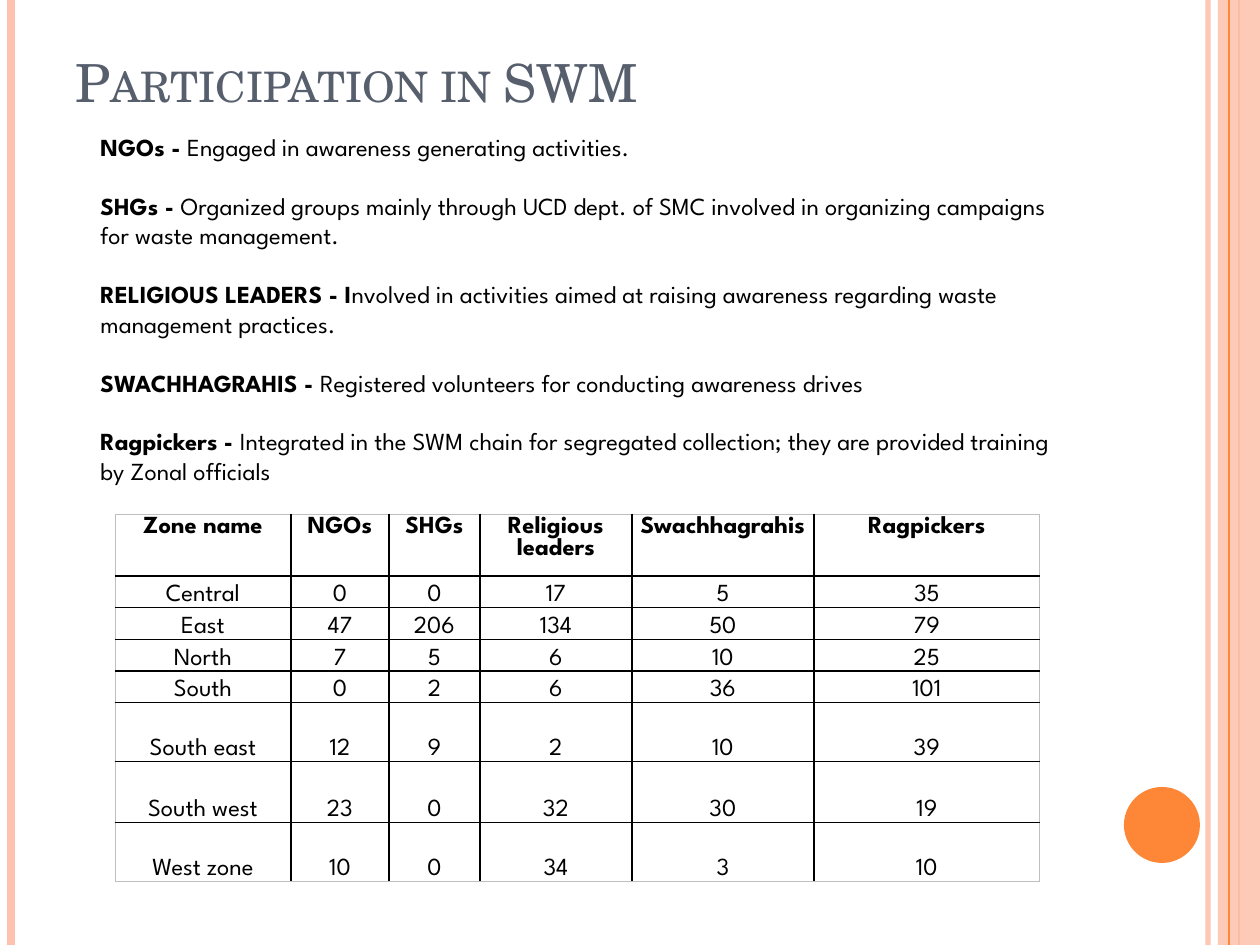
from dataclasses import dataclass

from lxml.etree import SubElement
from pptx import Presentation
from pptx.dml.color import RGBColor
from pptx.enum.shapes import MSO_CONNECTOR, MSO_SHAPE
from pptx.enum.text import MSO_ANCHOR as Anchor, PP_ALIGN as Align
from pptx.oxml import parse_xml
from pptx.oxml.ns import nsdecls, qn
from pptx.util import Emu, Pt

PX = 914400 / 126
WIDTH, HEIGHT = 1260, 945
PEACH = RGBColor(0xFE, 0xC3, 0xAE)
ORANGE = RGBColor(0xFE, 0x86, 0x37)
SLATE = RGBColor(0x57, 0x5F, 0x6D)
BLACK = RGBColor(0, 0, 0)
WHITE = RGBColor(0xFF, 0xFF, 0xFF)
GREY = RGBColor(0xBF, 0xBF, 0xBF)
BODY_FONT, TITLE_FONT = "League Spartan", "TeX Gyre Schola"


@dataclass(frozen=True)
class Stripe:
    x: int
    color: RGBColor
    points: float
    opacity: int = 100


@dataclass(frozen=True)
class Group:
    label: str
    role: str


STRIPES = [
    Stripe(1208, PEACH, 3, 93),
    Stripe(11, PEACH, 4.5),
    Stripe(1239, ORANGE, 1.5),
]
FRONT_STRIPE = Stripe(1229, ORANGE, 0.75)
GROUPS = [
    Group("NGOs - ", "Engaged in awareness generating activities."),
    Group("SHGs - ", "Organized groups mainly through UCD dept. of SMC involved in "
                     "organizing campaigns for waste management."),
    Group("RELIGIOUS LEADERS - I", "nvolved in activities aimed at raising awareness "
                                   "regarding waste management practices."),
    Group("SWACHHAGRAHIS - ", "Registered volunteers for conducting awareness drives"),
    Group("Ragpickers - ", "Integrated in the SWM chain for segregated collection; "
                           "they are provided training by Zonal officials"),
]
ZONES = [
    ("Zone name", "NGOs", "SHGs", "Religious leaders", "Swachhagrahis", "Ragpickers"),
    ("Central", 0, 0, 17, 5, 35),
    ("East", 47, 206, 134, 50, 79),
    ("North", 7, 5, 6, 10, 25),
    ("South", 0, 2, 6, 36, 101),
    ("South east", 12, 9, 2, 10, 39),
    ("South west", 23, 0, 32, 30, 19),
    ("West zone", 10, 0, 34, 3, 10),
]
COLUMN_WIDTHS = [176, 98, 91, 152, 182, 226]
ROW_HEIGHTS = [62, 31, 32, 31, 31, 59, 61, 59]


def px(value: int) -> Emu:
    return Emu(round(value * PX))


def box(left: int, top: int, width: int, height: int) -> tuple:
    return px(left), px(top), px(width), px(height)


def set_opacity(properties, percent: int) -> None:
    color = next(properties.iter(qn("a:srgbClr")))
    SubElement(color, qn("a:alpha"), val=str(percent * 1000))


def format_run(run, font: str, size: int, color: RGBColor, bold: bool = False) -> None:
    run.font.name = font
    run.font.size = Pt(size)
    run.font.color.rgb = color
    run.font.bold = bold


def draw_stripe(slide, stripe: Stripe) -> None:
    line = slide.shapes.add_connector(
        MSO_CONNECTOR.STRAIGHT, px(stripe.x), 0, px(stripe.x), px(HEIGHT))
    line.line.color.rgb = stripe.color
    line.line.width = Pt(stripe.points)
    properties = line._element.spPr
    if stripe.opacity < 100:
        set_opacity(properties, stripe.opacity)
    SubElement(properties, qn("a:effectLst"))


def draw_solid(slide, kind: MSO_SHAPE, bounds: tuple, color: RGBColor):
    shape = slide.shapes.add_shape(kind, *bounds)
    shape.shadow.inherit = False
    shape.fill.solid()
    shape.fill.fore_color.rgb = color
    shape.line.fill.background()
    return shape


def draw_title(slide) -> None:
    text_frame = slide.shapes.add_textbox(*box(63, 0, 1029, 119)).text_frame
    text_frame.word_wrap = True
    text_frame.vertical_anchor = Anchor.BOTTOM
    text_frame.text = "Participation in SWM"
    run = text_frame.paragraphs[0].runs[0]
    format_run(run, TITLE_FONT, 30, SLATE)
    run.font._element.set("cap", "small")


def draw_groups(slide) -> None:
    text_frame = slide.shapes.add_textbox(*box(88, 126, 979, 398)).text_frame
    text_frame.word_wrap = True
    for index, group in enumerate(GROUPS):
        paragraph = text_frame.add_paragraph() if index else text_frame.paragraphs[0]
        paragraph.text = group.label
        paragraph.add_run().text = group.role
        paragraph.space_after = Pt(16.8)
        for run, bold in zip(paragraph.runs, (True, False)):
            format_run(run, BODY_FONT, 14, BLACK, bold)


def set_borders(cell, outer_sides: dict[str, bool]) -> None:
    """Draw grey hairlines on the table's rim and black lines inside it."""
    properties = cell._tc.get_or_add_tcPr()
    for index, (side, is_outer) in enumerate(outer_sides.items()):
        color, points = (GREY, 0.5) if is_outer else (BLACK, 1)
        properties.insert(index, parse_xml(
            f'<a:ln{side} {nsdecls("a")} w="{Pt(points)}"><a:solidFill>'
            f'<a:srgbClr val="{color}"/></a:solidFill></a:ln{side}>'))


def fill_cell(cell, value: str | int, is_header: bool, is_filled: bool) -> None:
    cell.margin_left = cell.margin_right = px(1)
    cell.margin_top = px(2)
    cell.margin_bottom = 0
    cell.vertical_anchor = Anchor.TOP if is_header else Anchor.BOTTOM
    if is_filled:
        cell.fill.solid()
        cell.fill.fore_color.rgb = WHITE
    else:
        cell.fill.background()
    cell.text_frame.text = str(value)
    paragraph = cell.text_frame.paragraphs[0]
    paragraph.alignment = Align.CENTER
    format_run(paragraph.runs[0], BODY_FONT, 14, BLACK, is_header)


def draw_zone_table(slide) -> None:
    last_row, last_column = len(ROW_HEIGHTS) - 1, len(COLUMN_WIDTHS) - 1
    table = slide.shapes.add_table(
        last_row + 1, last_column + 1,
        *box(115, 514, sum(COLUMN_WIDTHS), sum(ROW_HEIGHTS))).table
    table.first_row = table.horz_banding = False
    for column, width in zip(table.columns, COLUMN_WIDTHS):
        column.width = px(width)
    for row, height in zip(table.rows, ROW_HEIGHTS):
        row.height = px(height)
    for r, values in enumerate(ZONES):
        for c, value in enumerate(values):
            cell = table.cell(r, c)
            fill_cell(cell, value, r == 0, c == last_column)
            set_borders(cell, {"L": c == 0, "R": c == last_column,
                               "T": r == 0, "B": r == last_row})


def main() -> None:
    presentation = Presentation()
    presentation.slide_width, presentation.slide_height = px(WIDTH), px(HEIGHT)
    slide = presentation.slides.add_slide(presentation.slide_layouts[6])
    for stripe in STRIPES:
        draw_stripe(slide, stripe)
    band = draw_solid(slide, MSO_SHAPE.RECTANGLE, box(1218, 0, 42, HEIGHT), PEACH)
    set_opacity(band._element.spPr, 87)
    draw_stripe(slide, FRONT_STRIPE)
    draw_solid(slide, MSO_SHAPE.OVAL, box(1124, 787, 76, 76), ORANGE)
    draw_title(slide)
    draw_zone_table(slide)
    draw_groups(slide)
    presentation.save("out.pptx")


if __name__ == "__main__":
    main()
